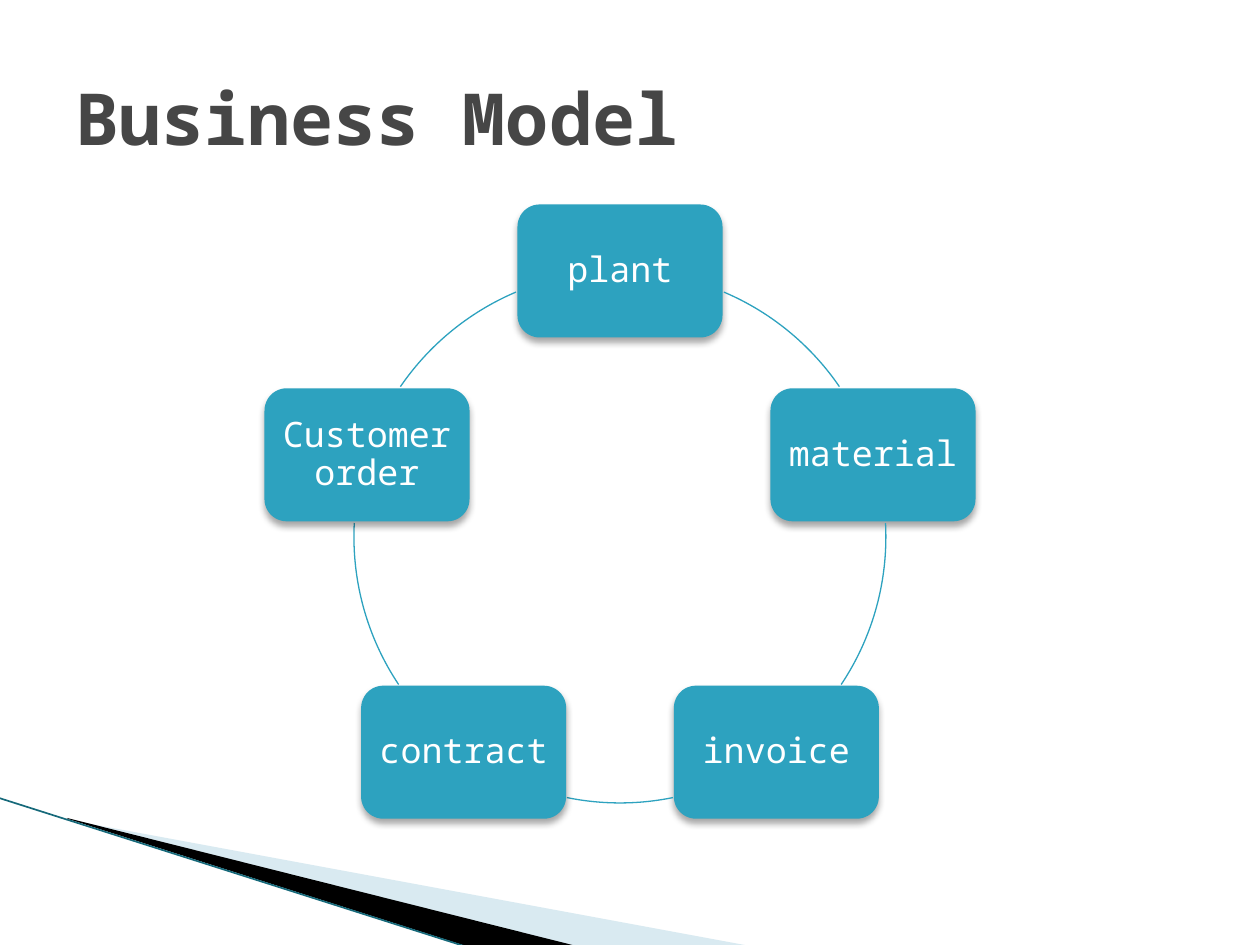
from math import cos, radians, sin

from lxml.etree import SubElement
from pptx import Presentation
from pptx.dml.color import RGBColor
from pptx.enum.shapes import MSO_CONNECTOR, MSO_SHAPE
from pptx.enum.text import MSO_ANCHOR, PP_ALIGN
from pptx.oxml.ns import qn
from pptx.util import Emu, Pt

SCALE = 914400 / 126
FONT = "Noto Sans Mono"
TEAL = RGBColor(0x2D, 0xA2, 0xBF)
DARK_TEAL = RGBColor(0x16, 0x69, 0x7A)
PALE_BLUE = RGBColor(0xA0, 0xCB, 0xDC)
GRAY = RGBColor(0x46, 0x46, 0x46)
BLACK = RGBColor(0, 0, 0)
WHITE = RGBColor(0xFF, 0xFF, 0xFF)

CENTER_X, CENTER_Y, RADIUS = 620, 537, 266
NODE_WIDTH, NODE_HEIGHT = 205, 133
STEPS = ["plant", "material", "invoice", "contract", "Customer order"]
ARCS = [(293, 325.6), (357, 33.7), (78.5, 101.5), (146.3, 183), (214.4, 247)]
WEDGES = [
    ([(69, 820), (750, 946), (575, 946), (69, 819)], PALE_BLUE, 40),
    ([(67, 818), (576, 946), (469, 947), (68, 819)], BLACK, 100),
]


def px(length):
    return Emu(round(length * SCALE))


def add_alpha(color, percent):
    SubElement(color, qn("a:alpha")).set("val", str(percent * 1000))


deck = Presentation()
deck.slide_width, deck.slide_height = px(1260), px(945)
page = deck.slides.add_slide(deck.slide_layouts[5])
shapes = page.shapes

for points, color, opacity in WEDGES:
    builder = shapes.build_freeform(*points[0], scale=SCALE)
    builder.add_line_segments(points[1:], close=True)
    wedge = builder.convert_to_shape()
    wedge.shadow.inherit = False
    wedge.fill.solid()
    wedge.fill.fore_color.rgb = color
    wedge.line.fill.background()
    if opacity < 100:
        add_alpha(wedge.fill._xPr.find(".//" + qn("a:srgbClr")), opacity)

edge = shapes.add_connector(MSO_CONNECTOR.STRAIGHT, px(-1), px(798), px(467), px(947))
edge.line.color.rgb = DARK_TEAL
edge.line.width = Pt(0.95)
SubElement(edge._element.spPr, qn("a:effectLst"))

for index, (step, (start, end)) in enumerate(zip(STEPS, ARCS)):
    angle = radians(-90 + index * 360 / len(STEPS))
    left = CENTER_X + RADIUS * cos(angle) - NODE_WIDTH / 2
    top = CENTER_Y + RADIUS * sin(angle) - NODE_HEIGHT / 2
    node = shapes.add_shape(MSO_SHAPE.ROUNDED_RECTANGLE, px(left), px(top), px(NODE_WIDTH), px(NODE_HEIGHT))
    node.fill.solid()
    node.fill.fore_color.rgb = TEAL
    node.line.fill.background()
    node.shadow.inherit = False
    effects = node._element.spPr.find(qn("a:effectLst"))
    shadow = SubElement(effects, qn("a:outerShdw"), blurRad="50800", dist="38100", dir="5400000", rotWithShape="0")
    add_alpha(SubElement(shadow, qn("a:srgbClr"), val="000000"), 35)

    frame = node.text_frame
    frame.text = step
    frame.word_wrap = True
    frame.vertical_anchor = MSO_ANCHOR.MIDDLE
    frame.margin_left = frame.margin_right = px(4)
    frame.margin_top = frame.margin_bottom = px(4)
    para = frame.paragraphs[0]
    para.alignment = PP_ALIGN.CENTER
    para.line_spacing = 0.9
    span = para.runs[0]
    span.font.name = FONT
    span.font.size = Pt(20)
    span.font.color.rgb = WHITE

    arc = shapes.add_shape(MSO_SHAPE.ARC, px(CENTER_X - RADIUS), px(CENTER_Y - RADIUS), px(2 * RADIUS), px(2 * RADIUS))
    arc.adjustments[0] = start * 0.6
    arc.adjustments[1] = end * 0.6
    arc.fill.background()
    arc.line.color.rgb = TEAL
    arc.line.width = Pt(0.75)
    arc.shadow.inherit = False

title = shapes.title
title.left, title.top, title.width, title.height = px(63), px(38), px(1134), px(158)
title.text_frame.text = "Business Model"
title.text_frame.vertical_anchor = MSO_ANCHOR.MIDDLE
heading = title.text_frame.paragraphs[0]
heading.alignment = PP_ALIGN.LEFT
span = heading.runs[0]
span.font.name = FONT
span.font.size = Pt(41)
span.font.bold = True
span.font.color.rgb = GRAY

deck.save("out.pptx")
